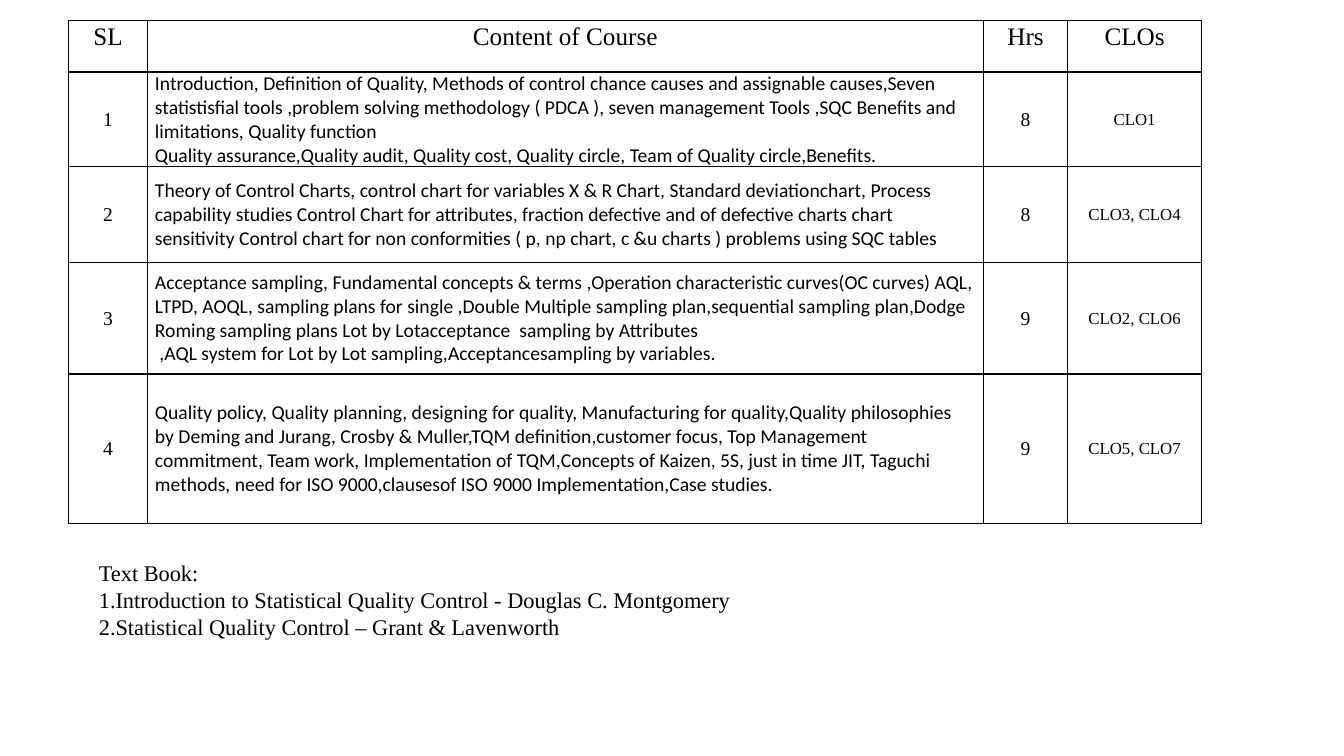
"""Builds a course syllabus slide: a content table above a list of text books."""
from lxml import etree
from pptx import Presentation
from pptx.dml.color import RGBColor
from pptx.enum import text as t
from pptx.oxml import ns
from pptx.util import Pt

COLORS = {"ink": "000000", "paper": "FFFFFF"}
SERIF, SANS = "Times New Roman", "Calibri"
HEADINGS = ["SL", "Content of Course", "Hrs", "CLOs"]
COLUMN_WIDTHS = [56.3, 597, 60.5, 95.4]
ROW_HEIGHTS = [36.7, 55.4, 69, 79.4, 106.6]
UNITS = [
    (["Introduction, Definition of Quality, Methods of control chance causes and assignable causes,"
      "Seven statistisfial tools ,problem solving methodology ( PDCA ), seven management Tools ,"
      "SQC Benefits and limitations, Quality function ",
      "Quality assurance,Quality audit, Quality cost, Quality circle, Team of Quality circle,Benefits."],
     "8", "CLO1"),
    (["Theory of Control Charts, control chart for variables X & R Chart, Standard deviationchart, "
      "Process capability studies Control Chart for attributes, fraction defective and of defective "
      "charts chart sensitivity Control chart for non conformities ( p, np chart, c &u charts ) "
      "problems using SQC tables"],
     "8", "CLO3, CLO4"),
    (["Acceptance sampling, Fundamental concepts & terms ,Operation characteristic curves(OC curves) "
      "AQL, LTPD, AOQL, sampling plans for single ,Double Multiple sampling plan,sequential sampling "
      "plan,Dodge Roming sampling plans Lot by Lotacceptance  sampling by Attributes",
      " ,AQL system for Lot by Lot sampling,Acceptancesampling by variables."],
     "9", "CLO2, CLO6"),
    (["Quality policy, Quality planning, designing for quality, Manufacturing for "
      "quality,Quality philosophies by Deming and Jurang, Crosby & Muller,TQM definition,"
      "customer focus, Top Management commitment, Team work, Implementation of TQM,Concepts of "
      "Kaizen, 5S, just in time JIT, Taguchi methods, need for ISO 9000,clausesof ISO 9000 "
      "Implementation,Case studies."],
     "9", "CLO5, CLO7"),
]
BOOKS = ["Introduction to Statistical Quality Control - Douglas C. Montgomery",
         "Statistical Quality Control – Grant & Lavenworth"]


def write_lines(frame, lines, size, font, align, spacing=1.0):
    for index, line in enumerate(lines):
        paragraph = frame.add_paragraph() if index else frame.paragraphs[0]
        paragraph.alignment = align
        paragraph.line_spacing = spacing
        paragraph.space_before = paragraph.space_after = Pt(0)
        run = paragraph.add_run()
        run.text = line
        run.font.size, run.font.name, run.font.bold = Pt(size), font, False
        run.font.color.rgb = RGBColor.from_string(COLORS["ink"])


def add_borders(cell):
    properties = cell._tc.get_or_add_tcPr()
    for position, side in enumerate(("lnL", "lnR", "lnT", "lnB")):
        border = etree.Element(ns.qn(f"a:{side}"), w=str(Pt(1)))
        fill = etree.SubElement(border, ns.qn("a:solidFill"))
        etree.SubElement(fill, ns.qn("a:srgbClr"), val=COLORS["ink"])
        properties.insert(position, border)


def fill_cell(cell, lines, size, centred=True, anchor=t.MSO_ANCHOR.MIDDLE):
    cell.margin_left = cell.margin_right = Pt(5.4)
    cell.margin_top = cell.margin_bottom = Pt(0)
    cell.vertical_anchor = anchor
    if centred:
        write_lines(cell.text_frame, lines, size, SERIF, t.PP_ALIGN.CENTER, 1.07)
    else:
        write_lines(cell.text_frame, lines, size, SANS, t.PP_ALIGN.LEFT)
    cell.fill.background()
    add_borders(cell)


def add_syllabus(slide):
    syllabus = slide.shapes.add_table(
        len(ROW_HEIGHTS), len(COLUMN_WIDTHS), Pt(49), Pt(14.8),
        Pt(sum(COLUMN_WIDTHS)), Pt(sum(ROW_HEIGHTS))).table
    syllabus.first_row = syllabus.horz_banding = False
    for column, width in zip(syllabus.columns, COLUMN_WIDTHS):
        column.width = Pt(width)
    for row, height in zip(syllabus.rows, ROW_HEIGHTS):
        row.height = Pt(height)
    for column, heading in enumerate(HEADINGS):
        fill_cell(syllabus.cell(0, column), [heading], 18, anchor=t.MSO_ANCHOR.TOP)
    for number, (topics, hours, outcomes) in enumerate(UNITS, 1):
        fill_cell(syllabus.cell(number, 0), [str(number)], 14)
        fill_cell(syllabus.cell(number, 1), topics, 14, centred=False)
        fill_cell(syllabus.cell(number, 2), [hours], 14)
        fill_cell(syllabus.cell(number, 3), [outcomes], 12)


def set_numbering(paragraph, numbered):
    properties = paragraph._p.get_or_add_pPr()
    properties.set("marL", "0")
    properties.set("indent", "0")
    if numbered:
        etree.SubElement(properties, ns.qn("a:buFont"), typeface=SERIF)
        etree.SubElement(properties, ns.qn("a:buAutoNum"), type="arabicPeriod")
    else:
        etree.SubElement(properties, ns.qn("a:buNone"))


def add_books(reading):
    reading.left, reading.top = Pt(63.4), Pt(395.3)
    reading.width, reading.height = Pt(854.6), Pt(65.5)
    frame = reading.text_frame
    frame.word_wrap = True
    frame.auto_size = t.MSO_AUTO_SIZE.SHAPE_TO_FIT_TEXT
    frame.vertical_anchor = t.MSO_ANCHOR.MIDDLE
    write_lines(frame, ["Text Book:", *BOOKS], 16, SERIF, t.PP_ALIGN.LEFT)
    for index, paragraph in enumerate(frame.paragraphs):
        set_numbering(paragraph, index > 0)


def main():
    deck = Presentation()
    deck.slide_width, deck.slide_height = Pt(960), Pt(540)
    slide = deck.slides.add_slide(deck.slide_layouts[1])
    slide.background.fill.solid()
    slide.background.fill.fore_color.rgb = RGBColor.from_string(COLORS["paper"])
    title = slide.shapes.title.element
    title.getparent().remove(title)
    add_syllabus(slide)
    add_books(slide.placeholders[1])
    deck.save("out.pptx")


if __name__ == "__main__":
    main()
